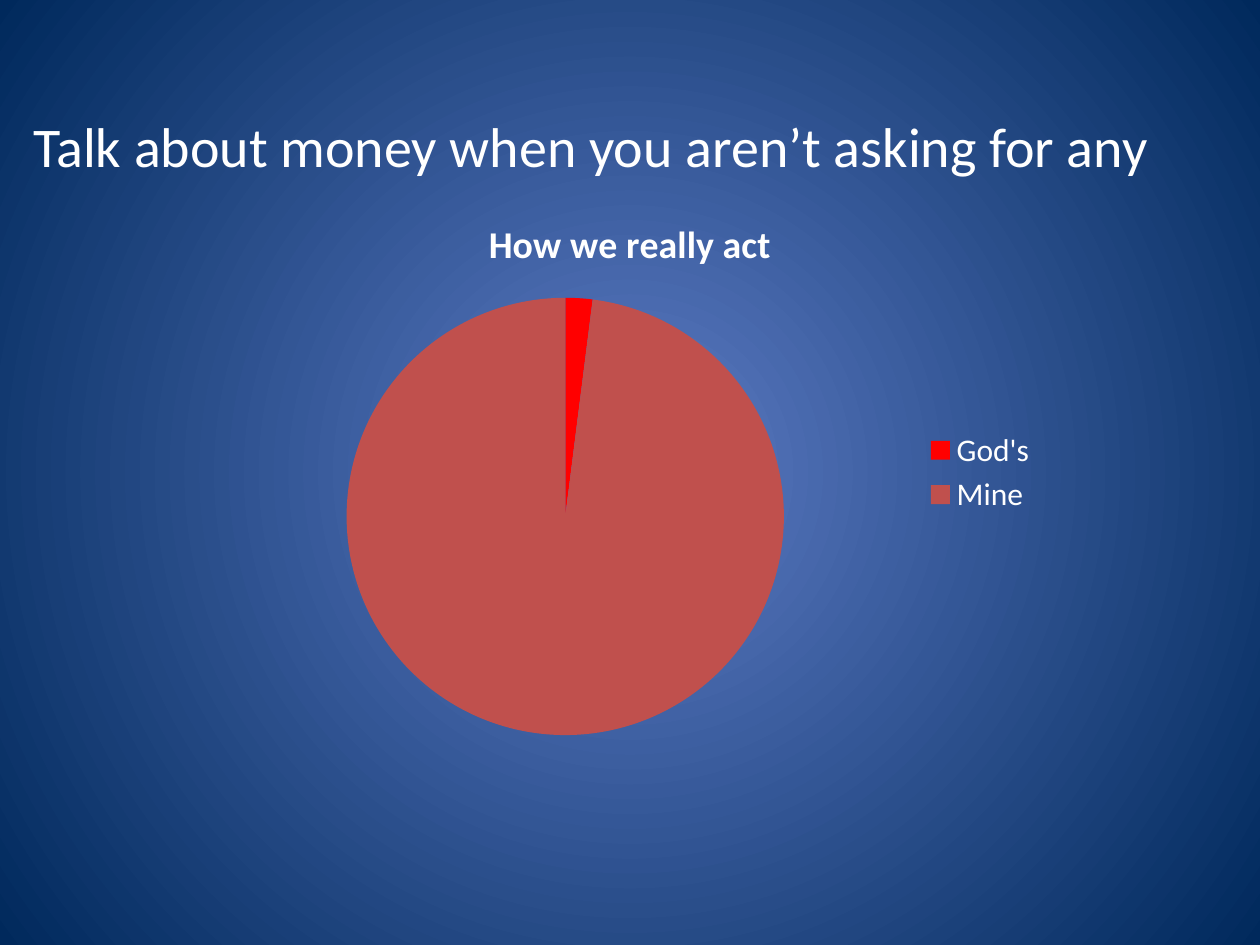
from dataclasses import dataclass

from lxml.etree import SubElement
from pptx import Presentation
from pptx.chart.data import CategoryChartData
from pptx.dml.color import RGBColor
from pptx.enum.chart import XL_CHART_TYPE, XL_LEGEND_POSITION
from pptx.oxml.ns import qn
from pptx.slide import Slide
from pptx.text.text import TextFrame
from pptx.util import Pt

WHITE = RGBColor(0xFF, 0xFF, 0xFF)
RED = RGBColor(0xFF, 0x00, 0x00)
BRICK = RGBColor(0xC0, 0x50, 0x4D)
GLOW_BLUE = RGBColor(0x5E, 0x7C, 0xC5)
NAVY = RGBColor(0x00, 0x29, 0x5C)
FONT = "Calibri"


@dataclass(frozen=True)
class Share:
    owner: str
    percent: int
    color: RGBColor


SHARES = [Share("God's", 2, RED), Share("Mine", 98, BRICK)]


def write_text(frame: TextFrame, text: str, *, size: float, bold: bool = False) -> None:
    run = frame.paragraphs[0].add_run()
    run.text = text
    run.font.name = FONT
    run.font.size = Pt(size)
    run.font.bold = bold
    run.font.color.rgb = WHITE


def paint_background(slide: Slide) -> None:
    fill = slide.background.fill
    fill.gradient()
    for stop, position, color in zip(fill.gradient_stops, (0, 1), (GLOW_BLUE, NAVY)):
        stop.position = position
        stop.color.rgb = color
    gradient = slide.element.find(".//" + qn("a:gradFill"))
    gradient.remove(gradient.find(qn("a:lin")))
    radial = SubElement(gradient, qn("a:path"), path="circle")
    SubElement(radial, qn("a:fillToRect"), l="50000", t="50000", r="50000", b="50000")


def add_headline(slide: Slide, text: str) -> None:
    headline = slide.shapes.add_textbox(Pt(12), Pt(60), Pt(696), Pt(46))
    headline.text_frame.word_wrap = True
    write_text(headline.text_frame, text, size=32)


def add_share_pie(slide: Slide, title: str, shares: list[Share]) -> None:
    data = CategoryChartData()
    data.categories = [share.owner for share in shares]
    data.add_series(title, [share.percent for share in shares])
    pie = slide.shapes.add_chart(
        XL_CHART_TYPE.PIE, Pt(120), Pt(110), Pt(480), Pt(320), data
    ).chart
    pie.font.name = FONT
    pie.font.size = Pt(18)
    pie.font.color.rgb = WHITE
    pie.has_title = True
    write_text(pie.chart_title.text_frame, title, size=21.6, bold=True)
    pie.chart_title.include_in_layout = False
    pie.has_legend = True
    pie.legend.position = XL_LEGEND_POSITION.RIGHT
    pie.legend.include_in_layout = False
    pie.plots[0].vary_by_categories = True
    for index, share in enumerate(shares):
        slice_fill = pie.plots[0].series[0].points[index].format.fill
        slice_fill.solid()
        slice_fill.fore_color.rgb = share.color


def main() -> None:
    deck = Presentation()
    deck.slide_width, deck.slide_height = Pt(720), Pt(540)
    slide = deck.slides.add_slide(deck.slide_layouts[6])
    paint_background(slide)
    add_headline(slide, "Talk about money when you aren’t asking for any")
    add_share_pie(slide, "How we really act", SHARES)
    deck.save("out.pptx")


if __name__ == "__main__":
    main()
